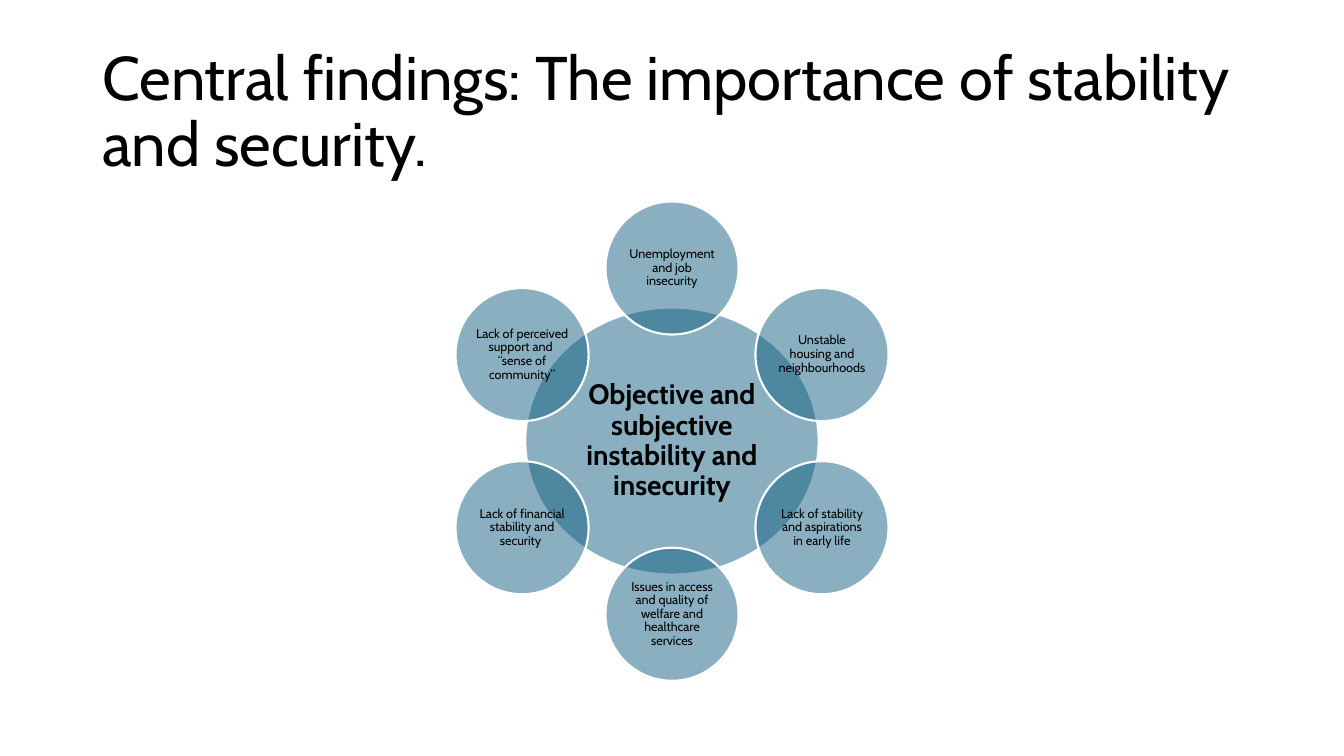
from dataclasses import dataclass
from math import cos, radians, sin

from lxml.etree import SubElement
from pptx import Presentation
from pptx.dml.color import RGBColor as Color
from pptx.enum.shapes import MSO_SHAPE as Preset
from pptx.enum.text import MSO_ANCHOR as Anchor, PP_ALIGN as Align
from pptx.oxml.ns import qn
from pptx.util import Inches, Pt


@dataclass(frozen=True)
class Theme:
    font: str = "Cabin"
    ink: str = "000000"
    paper: str = "FFFFFF"
    circle: str = "156082"
    opacity: int = 50
    outline: float = 1.5
    title_size: int = 44
    hub_size: int = 20
    factor_size: int = 9
    line_spacing: float = 0.9


class FindingsSlide:
    def __init__(self, deck, theme):
        self.theme = theme
        self.slide = deck.slides.add_slide(deck.slide_layouts[6])
        self.column = deck.slide_width / 100
        self.row = deck.slide_height / 100
        background = self.slide.background.fill
        background.solid()
        background.fore_color.rgb = Color.from_string(theme.paper)
        self.diagram = self.slide.shapes.add_group_shape()

    def add_wording(self, frame, text, size, align, bold=False, inset=None):
        frame.word_wrap = True
        frame.vertical_anchor = Anchor.MIDDLE
        if inset is not None:
            frame.margin_left = frame.margin_right = Inches(inset)
            frame.margin_top = frame.margin_bottom = Inches(inset)
        paragraph = frame.paragraphs[0]
        paragraph.alignment = align
        paragraph.line_spacing = self.theme.line_spacing
        for index, line in enumerate(text.split("\n")):
            if index:
                paragraph.add_line_break()
            run = paragraph.add_run()
            run.text = line
            run.font.name = self.theme.font
            run.font.size = Pt(size)
            run.font.bold = bold
            run.font.color.rgb = Color.from_string(self.theme.ink)

    def title(self, text, left, top, columns, rows):
        heading = self.slide.shapes.add_textbox(
            round(left * self.column), round(top * self.row),
            round(columns * self.column), round(rows * self.row))
        self.add_wording(heading.text_frame, text, self.theme.title_size, Align.LEFT)

    def circle(self, text, center, width, height, size, inset, bold=False):
        x, y = center
        bubble = self.diagram.shapes.add_shape(
            Preset.OVAL, round(x - width / 2), round(y - height / 2),
            round(width), round(height))
        bubble.shadow.inherit = False
        bubble.fill.solid()
        bubble.fill.fore_color.rgb = Color.from_string(self.theme.circle)
        tint = next(bubble.element.spPr.iter(qn("a:srgbClr")))
        SubElement(tint, qn("a:alpha"), val=str(self.theme.opacity * 1000))
        bubble.line.color.rgb = Color.from_string(self.theme.paper)
        bubble.line.width = Pt(self.theme.outline)
        self.add_wording(bubble.text_frame, text, size, Align.CENTER, bold, inset)

    def radial(self, hub, factors, center, hub_rows, factor_rows, orbit_rows):
        x, y = center[0] * self.column, center[1] * self.row
        hub_width, hub_height = (rows * self.row for rows in hub_rows)
        self.circle(hub, (x, y), hub_width, hub_height,
                    self.theme.hub_size, 0.03, bold=True)
        diameter = factor_rows * self.row
        orbit = orbit_rows * self.row
        for index, factor in enumerate(factors):
            angle = radians(360 / len(factors) * index)
            spot = x + orbit * sin(angle), y - orbit * cos(angle)
            self.circle(factor, spot, diameter, diameter,
                        self.theme.factor_size, 0.01)


FACTORS = [
    "Unemployment and job insecurity",
    "Unstable housing and neighbourhoods",
    "Lack of stability and aspirations in early life",
    "Issues in access and quality of welfare and healthcare services",
    "Lack of financial stability and security ",
    "Lack of perceived support and \n“sense of community”",
]


def main():
    deck = Presentation()
    deck.slide_width, deck.slide_height = Inches(13.33), Inches(7.5)
    findings = FindingsSlide(deck, Theme())
    findings.title("Central findings: The importance of stability and security.",
                   6.88, 5.33, 86.25, 19.33)
    findings.radial("Objective and subjective instability and insecurity", FACTORS,
                    center=(50, 58.35), hub_rows=(38.8, 35.33),
                    factor_rows=17.6, orbit_rows=22.9)
    deck.save("out.pptx")


if __name__ == "__main__":
    main()
